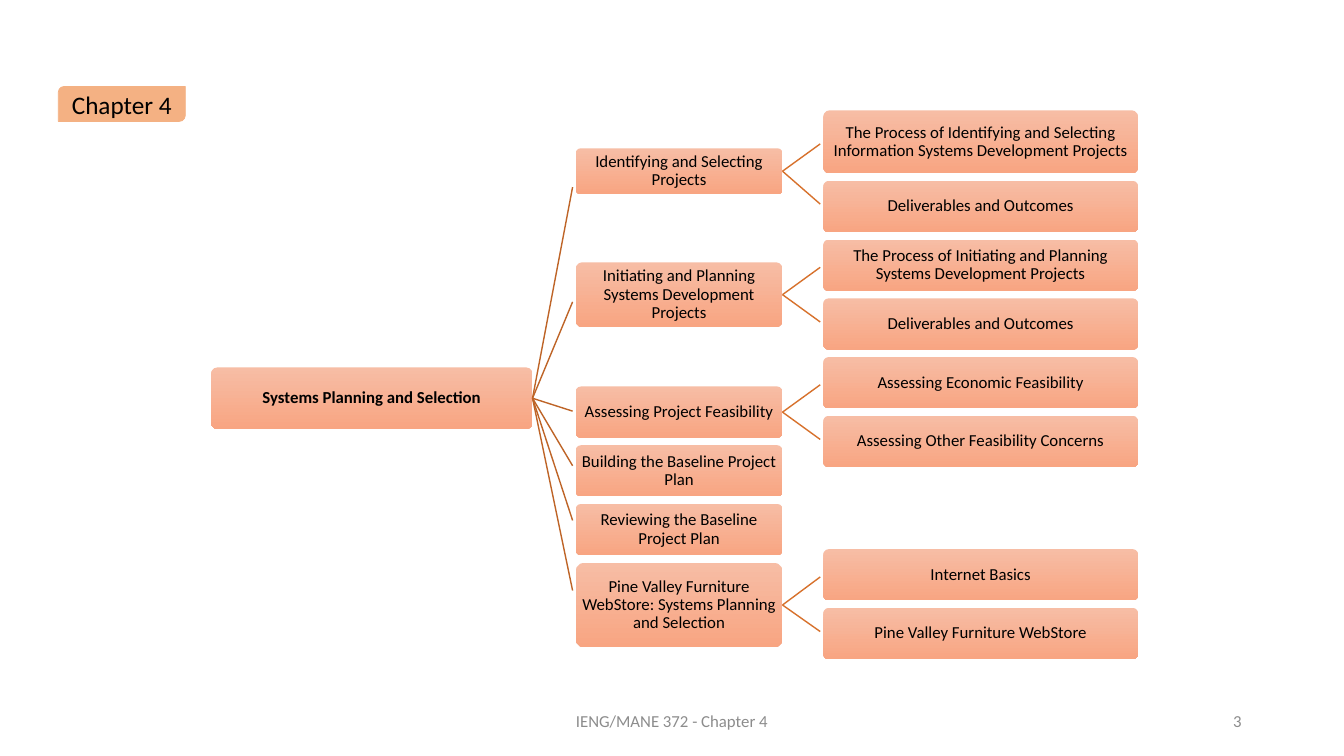
from dataclasses import dataclass

from lxml.etree import SubElement
from pptx import Presentation
from pptx.dml.color import RGBColor
from pptx.enum.shapes import MSO_CONNECTOR, MSO_SHAPE
from pptx.enum.text import MSO_ANCHOR, PP_ALIGN
from pptx.oxml.ns import qn
from pptx.util import Cm, Pt


@dataclass(frozen=True)
class Theme:
    font: str = "Calibri"
    text: RGBColor = RGBColor.from_string("000000")
    muted: RGBColor = RGBColor.from_string("8C8C8C")
    tag: RGBColor = RGBColor.from_string("F4B183")
    node_top: RGBColor = RGBColor.from_string("F7BDA5")
    node_bottom: RGBColor = RGBColor.from_string("F8A582")
    root_link: RGBColor = RGBColor.from_string("BE6427")
    leaf_link: RGBColor = RGBColor.from_string("D7712C")
    tag_size: Pt = Pt(18)
    body_size: Pt = Pt(12)


THEME = Theme()
GAP = 0.19        # between stacked nodes, cm
NODE_HEIGHT = 1.29

# Branch: text, height, extra space above, leaves
# Leaf: text, height, extra space above
OUTLINE = [
    ("Identifying and Selecting Projects", 1.15, 0, [
        ("The Process of Identifying and Selecting Information Systems "
         "Development Projects", 1.59, 0),
        ("Deliverables and Outcomes", NODE_HEIGHT, 0)]),
    ("Initiating and Planning Systems Development Projects", 1.63, 1.53, [
        ("The Process of Initiating and Planning Systems Development Projects",
         NODE_HEIGHT, 0),
        ("Deliverables and Outcomes", NODE_HEIGHT, 0)]),
    ("Assessing Project Feasibility", NODE_HEIGHT, 1.31, [
        ("Assessing Economic Feasibility", NODE_HEIGHT, 0),
        ("Assessing Other Feasibility Concerns", NODE_HEIGHT, 0)]),
    ("Building the Baseline Project Plan", NODE_HEIGHT, 0, []),
    ("Reviewing the Baseline Project Plan", NODE_HEIGHT, 0, []),
    ("Pine Valley Furniture WebStore: Systems Planning and Selection", 2.13, 0, [
        ("Internet Basics", NODE_HEIGHT, 1.88),
        ("Pine Valley Furniture WebStore", NODE_HEIGHT, 0)]),
]


def write(shape, text, size, color, align=PP_ALIGN.CENTER, inset=0.02):
    frame = shape.text_frame
    frame.word_wrap = True
    frame.vertical_anchor = MSO_ANCHOR.MIDDLE
    frame.margin_left = frame.margin_right = Cm(inset)
    frame.margin_top = frame.margin_bottom = Cm(inset)
    paragraph = frame.paragraphs[0]
    paragraph.text = text
    paragraph.alignment = align
    paragraph.font.name = THEME.font
    paragraph.font.size = size
    paragraph.font.color.rgb = color
    return paragraph


def add_node(slide, text, left, top, width, height):
    node = slide.shapes.add_shape(
        MSO_SHAPE.ROUNDED_RECTANGLE, Cm(left), Cm(top), Cm(width), Cm(height))
    node.adjustments[0] = 0.1
    node.shadow.inherit = False
    node.line.fill.background()
    node.fill.gradient()
    node.fill.gradient_angle = 270
    for stop, color in zip(node.fill.gradient_stops,
                           (THEME.node_top, THEME.node_bottom)):
        stop.color.rgb = color
    write(node, text, THEME.body_size, THEME.text).line_spacing = 0.9
    return node


def add_link(slide, parent, child, color):
    """Line from the parent's right side to just short of the child."""
    start_x = parent.left + parent.width
    start_y = parent.top + parent.height // 2
    child_y = child.top + child.height // 2
    end_y = round(child_y + 0.07 * (start_y - child_y))
    link = slide.shapes.add_connector(
        MSO_CONNECTOR.STRAIGHT, start_x, start_y, child.left - Cm(0.08), end_y)
    link.begin_connect(parent, 3)
    link.line.color.rgb = color
    link.line.width = Pt(1)
    SubElement(link._element.spPr, qn("a:effectLst"))


def add_tag(slide, left, top, width, height):
    tag = slide.shapes.add_shape(
        MSO_SHAPE.ROUND_2_DIAG_RECTANGLE, Cm(left), Cm(top), Cm(width), Cm(height))
    tag.shadow.inherit = False
    tag.fill.solid()
    tag.fill.fore_color.rgb = THEME.tag
    tag.line.color.rgb = THEME.tag
    tag.line.width = Pt(0.5)
    write(tag, "Chapter 4", THEME.tag_size, THEME.text)


def add_tree(slide, left, top):
    # Root
    root = add_node(slide, "Systems Planning and Selection",
                    left, top + 6.48, 8.1, 1.55)
    root.text_frame.paragraphs[0].font.bold = True

    # Branches and leaves, each stacked down its own column
    branch_top, leaf_top = top + 0.96, top
    for branch_text, branch_height, branch_lead, leaves in OUTLINE:
        branch_top += branch_lead
        branch = add_node(slide, branch_text, left + 9.19, branch_top,
                          5.21, branch_height)
        add_link(slide, root, branch, THEME.root_link)
        branch_top += branch_height + GAP
        for leaf_text, leaf_height, leaf_lead in leaves:
            leaf_top += leaf_lead
            leaf = add_node(slide, leaf_text, left + 15.43, leaf_top,
                            7.93, leaf_height)
            add_link(slide, branch, leaf, THEME.leaf_link)
            leaf_top += leaf_height + GAP


def add_footer(slide, left, top, width, height):
    page_width = 7.62
    title = slide.shapes.add_textbox(Cm(left), Cm(top), Cm(11.43), Cm(height))
    write(title, "IENG/MANE 372 - Chapter 4", THEME.body_size, THEME.muted,
          inset=0.25)
    page = slide.shapes.add_textbox(
        Cm(left + width - page_width), Cm(top), Cm(page_width), Cm(height))
    write(page, "3", THEME.body_size, THEME.muted, PP_ALIGN.RIGHT, inset=0.25)


def main():
    deck = Presentation()
    deck.slide_width, deck.slide_height = Cm(33.87), Cm(19.05)
    slide = deck.slides.add_slide(deck.slide_layouts[6])
    add_tag(slide, 1.47, 2.18, 3.2, 0.88)
    add_tree(slide, 5.32, 2.78)
    add_footer(slide, 11.22, 17.66, 20.32, 1.01)
    deck.save("out.pptx")


if __name__ == "__main__":
    main()
